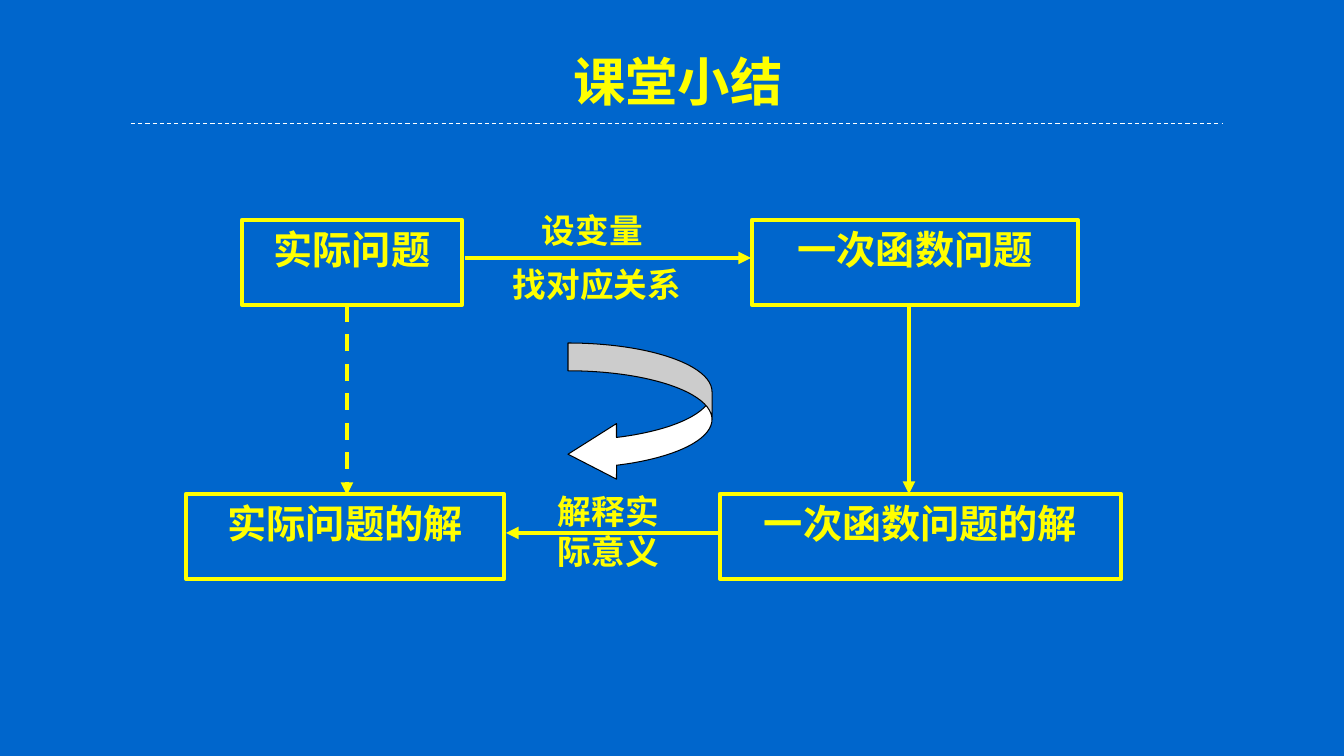
from lxml import etree
from pptx import Presentation, util as u
from pptx.dml.color import RGBColor
from pptx.enum import dml, shapes, text
from pptx.oxml.ns import qn

BLUE, YELLOW, WHITE, BLACK = "0066CC", "FFFF00", "FFFFFF", "000000"
CJK, LATIN = "Noto Sans CJK SC", "Times New Roman"
SCALE = 914400 / 100.8  # EMU per px

TITLE = ("课堂小结", (563, 44, 263, 74))
BOX_HEIGHT = 85
BOXES = [  # wording, left, top, width
    ("实际问题", 242, 220, 220),
    ("一次函数问题", 752, 220, 326),
    ("一次函数问题的解", 720, 494, 401),
    ("实际问题的解", 186, 494, 318),
]
LABELS = [  # lines, left, top, width, height
    (["设变量"], 532, 205, 170, 60),
    (["找对应关系"], 503, 259, 284, 60),
    (["解释实", "际意义"], 548, 486, 276, 119),
]
ARROWS = [  # x1, y1, x2, y2, dashed
    (465, 258, 751, 258, False),
    (909, 304, 909, 494, False),
    (720, 533, 506, 533, False),
    (347, 305, 347, 495, True),
]
RULE = (131, 124, 1223, 124)
TURN_ARROW = (568, 343, 144, 139)
TURN_ADJUSTMENTS = (0.2, 0.4, 0.349)


def px(*lengths):
    return [u.Emu(round(length * SCALE)) for length in lengths]


def color(value):
    return RGBColor.from_string(value)


def add_run(paragraph, wording, size, font_name):
    run = paragraph.add_run()
    run.text = wording
    font = run.font
    font.size, font.bold, font.name = u.Pt(size), True, font_name
    font.color.rgb = color(YELLOW)
    properties = run._r.get_or_add_rPr()
    etree.SubElement(properties, qn("a:ea"), typeface=CJK)
    return properties


def add_text_shadow(properties):
    effects = etree.Element(qn("a:effectLst"))
    shadow = etree.SubElement(effects, qn("a:outerShdw"), blurRad="38100",
                              dist="38100", dir="2700000", algn="tl")
    tint = etree.SubElement(shadow, qn("a:srgbClr"), val=BLACK)
    etree.SubElement(tint, qn("a:alpha"), val="43000")
    properties.find(qn("a:solidFill")).addnext(effects)


def add_title(slide):
    wording, place = TITLE
    title = slide.shapes.title
    title.left, title.top, title.width, title.height = px(*place)
    frame = title.text_frame
    frame.word_wrap = False
    frame.auto_size = text.MSO_AUTO_SIZE.NONE
    frame.vertical_anchor = text.MSO_ANCHOR.TOP
    paragraph = frame.paragraphs[0]
    paragraph.alignment = text.PP_ALIGN.LEFT
    add_text_shadow(add_run(paragraph, wording, 37.4, CJK))


def add_outlined(slide, kind, place, fill, line, width):
    shape = slide.shapes.add_shape(kind, *px(*place))
    shape.shadow.inherit = False
    shape.fill.solid()
    shape.fill.fore_color.rgb = color(fill)
    shape.line.color.rgb = color(line)
    shape.line.width = u.Pt(width)
    return shape


def add_box(slide, wording, left, top, width):
    box = add_outlined(slide, shapes.MSO_SHAPE.RECTANGLE,
                       (left, top, width, BOX_HEIGHT), BLUE, YELLOW, 3)
    frame = box.text_frame
    frame.vertical_anchor = text.MSO_ANCHOR.TOP
    paragraph = frame.paragraphs[0]
    paragraph.alignment = text.PP_ALIGN.CENTER
    add_run(paragraph, wording, 28, LATIN)


def add_label(slide, lines, *place):
    frame = slide.shapes.add_textbox(*px(*place)).text_frame
    frame.word_wrap = True
    for index, wording in enumerate(lines):
        paragraph = frame.add_paragraph() if index else frame.paragraphs[0]
        paragraph.alignment = text.PP_ALIGN.JUSTIFY
        add_run(paragraph, wording, 24, LATIN)


def add_line(slide, ends, line_color, width, dashed, arrow):
    connector = slide.shapes.add_connector(shapes.MSO_CONNECTOR.STRAIGHT, *px(*ends))
    line = connector.line
    line.color.rgb = color(line_color)
    line.width = u.Pt(width)
    if dashed:
        line.dash_style = dml.MSO_LINE.DASH
    if arrow:
        etree.SubElement(line._get_or_add_ln(), qn("a:tailEnd"), type="triangle")
    etree.SubElement(connector._element.spPr, qn("a:effectLst"))


def main():
    presentation = Presentation()
    presentation.slide_width, presentation.slide_height = px(1344, 756)
    slide = presentation.slides.add_slide(presentation.slide_layouts[5])
    slide.background.fill.solid()
    slide.background.fill.fore_color.rgb = color(BLUE)

    add_title(slide)
    add_line(slide, RULE, WHITE, 0.75, dashed=True, arrow=False)
    for box in BOXES:
        add_box(slide, *box)
    for *ends, dashed in ARROWS:
        add_line(slide, ends, YELLOW, 3, dashed, arrow=True)
    for label in LABELS:
        add_label(slide, *label)
    turn = add_outlined(slide, shapes.MSO_SHAPE.CURVED_LEFT_ARROW,
                        TURN_ARROW, WHITE, BLACK, 0.75)
    for index, value in enumerate(TURN_ADJUSTMENTS):
        turn.adjustments[index] = value
    presentation.save("out.pptx")


if __name__ == "__main__":
    main()
